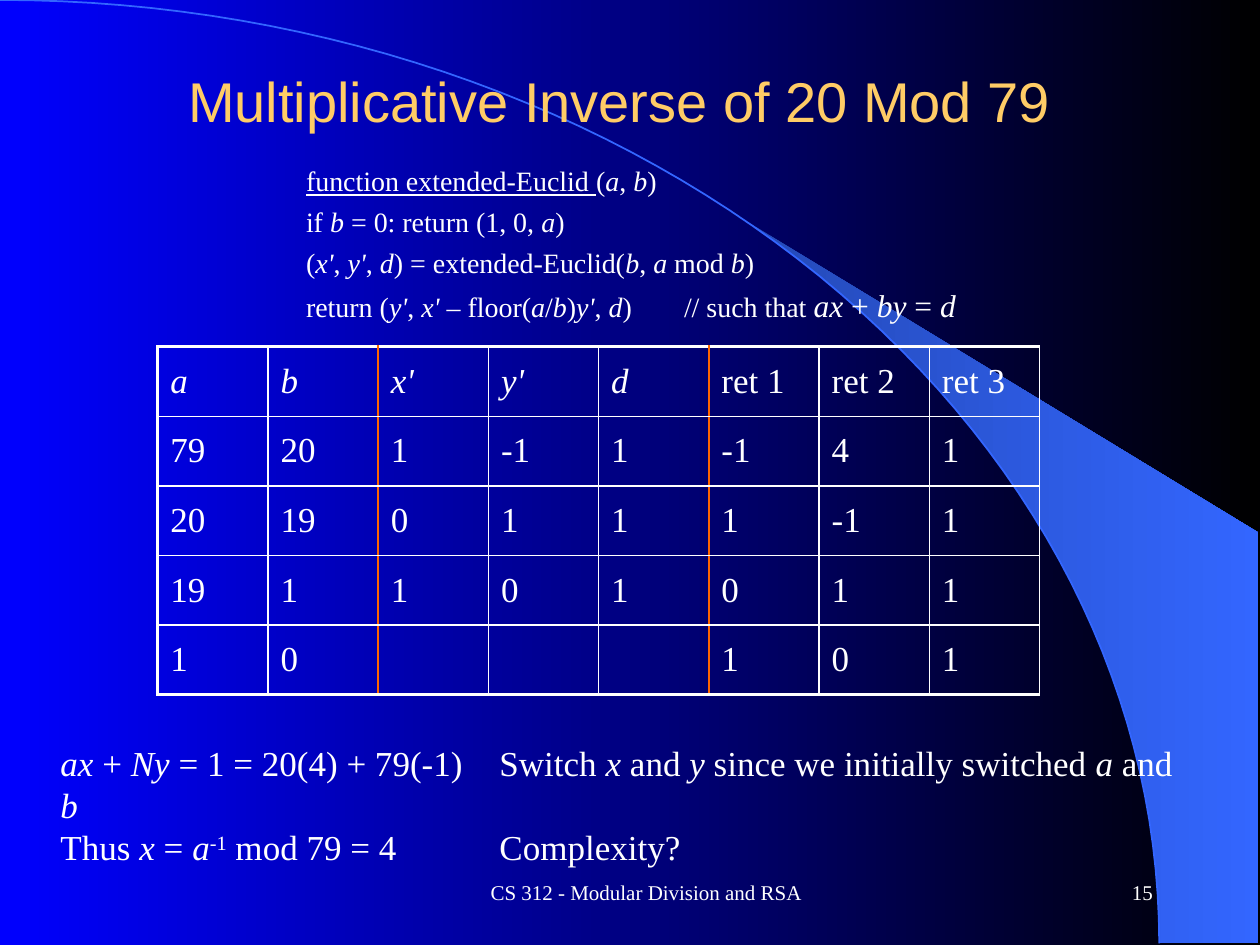
import math

import pptx
import pptx.dml.color
import pptx.enum.text
import pptx.oxml
import pptx.oxml.ns
import pptx.util
from pptx.util import Cm, Pt

WHITE, GOLD, ORANGE, SKY = "FFFFFF", "FFCC66", "FF6600", "3366FF"
CENTER = pptx.enum.text.PP_ALIGN.CENTER
RIGHT = pptx.enum.text.PP_ALIGN.RIGHT
MIDDLE = pptx.enum.text.MSO_ANCHOR.MIDDLE

TITLE = "Multiplicative Inverse of 20 Mod 79"
FOOTER = "CS 312 - Modular Division and RSA"
PAGE = "15"

# Asterisks enclose italics
ALGORITHM = [
    [("function extended-Euclid ", {"underline": True}), ("(*a*, *b*)", {})],
    "if *b* = 0: return (1, 0, *a*)",
    "(*x'*, *y'*, *d*) = extended-Euclid(*b*, *a *mod *b*)",
    [("return (*y'*, *x' *– floor(*a*/*b*)*y'*, *d*) \t// such that ", {}),
     ("*ax *+ *by *= *d*", {"size": 18})],
]
CONCLUSION = [
    "*ax *+ *Ny *= 1 = 20(4) + 79(-1)\tSwitch *x* and *y* since we initially switched *a* and *b*",
    [("Thus *x* = *a*", {}), ("-1", {"raised": True}), (" mod 79 = 4\tComplexity?", {})],
]
STEPS = [
    ["*a*", "*b*", "*x'*", "*y'*", "*d*", "ret 1", "ret 2", "ret 3"],
    ["79", "20", "1", "-1", "1", "-1", "4", "1"],
    ["20", "19", "0", "1", "1", "1", "-1", "1"],
    ["19", "1", "1", "0", "1", "0", "1", "1"],
    ["1", "0", "", "", "", "1", "0", "1"],
]
GROUP_STARTS = (2, 5)

ARC_WIDTH, ARC_HEIGHT = 23.37, 19.02
BEAM_RIGHT, BEAM_TOP = 25.37, 10.74
BEAM_START = math.asin(0.64)


def rgb(color):
    return pptx.dml.color.RGBColor.from_string(color)


def drawing_xml(content):
    return pptx.oxml.parse_xml(content.replace(" ", f" {pptx.oxml.ns.nsdecls('a')} ", 1))


def gradient(fill, colors):
    fill.gradient()
    fill.gradient_angle = 0
    for stop, color, position in zip(fill.gradient_stops, colors, (0, 1)):
        stop.color.rgb = rgb(color)
        stop.position = position


def write(frame, paragraphs, size=20, font="Times New Roman", color=WHITE,
          align=None, after=0, indent=0, tab=None):
    for number, pieces in enumerate(paragraphs):
        paragraph = frame.add_paragraph() if number else frame.paragraphs[0]
        paragraph.alignment = align
        paragraph.space_after = Pt(after)
        properties = paragraph._p.get_or_add_pPr()
        properties.set("marL", str(Cm(indent)))
        if tab:
            properties.append(drawing_xml(
                f'<a:tabLst ><a:tab pos="{Cm(tab)}" algn="l"/></a:tabLst>'))
        if isinstance(pieces, str):
            pieces = [(pieces, {})]
        for words, look in pieces:
            for part, text in enumerate(words.split("*")):
                if not text:
                    continue
                run = paragraph.add_run()
                run.text = text
                run.font.name = font
                run.font.size = Pt(look.get("size", size))
                run.font.color.rgb = rgb(color)
                run.font.italic = part % 2 == 1
                run.font.underline = look.get("underline", False)
                if look.get("raised"):
                    run.font._element.set("baseline", "30000")


def text_area(slide, place, paragraphs, anchor=None, **look):
    frame = slide.shapes.add_textbox(*map(Cm, place)).text_frame
    frame.word_wrap = True
    frame.vertical_anchor = anchor
    write(frame, paragraphs, **look)


def arc(start, segments=60):
    angles = [start + (math.pi / 2 - start) * i / segments for i in range(segments + 1)]
    return [(Cm(ARC_WIDTH * math.sin(t)), Cm(ARC_HEIGHT * (1 - math.cos(t)))) for t in angles]


def outline(slide, points, close):
    builder = slide.shapes.build_freeform(*points[0])
    builder.add_line_segments(points[1:], close=close)
    shape = builder.convert_to_shape()
    shape.shadow.inherit = False
    return shape


def draw_backdrop(slide):
    gradient(slide.background.fill, ("0000FF", "000000"))
    corners = [(Cm(BEAM_RIGHT), Cm(ARC_HEIGHT)), (Cm(BEAM_RIGHT), Cm(BEAM_TOP))]
    beam = outline(slide, arc(BEAM_START) + corners, True)
    gradient(beam.fill, ("2449B6", SKY))
    beam.line.fill.background()
    curve = outline(slide, arc(0), False)
    curve.fill.background()
    curve.line.color.rgb = rgb(SKY)
    curve.line.width = Pt(1)


def set_borders(cell, row, column):
    def vertical(edge):
        return (ORANGE if edge in GROUP_STARTS else WHITE, 1 if edge else 2.25)

    def horizontal(edge):
        return (WHITE, 2.25 if edge in (0, len(STEPS)) else 1)

    sides = {"lnL": vertical(column), "lnR": vertical(column + 1),
             "lnT": horizontal(row), "lnB": horizontal(row + 1)}
    properties = cell._tc.get_or_add_tcPr()
    for index, (side, (color, width)) in enumerate(sides.items()):
        properties.insert(index, drawing_xml(
            f'<a:{side} w="{Pt(width)}"><a:solidFill><a:srgbClr val="{color}"/>'
            f'</a:solidFill></a:{side}>'))


def draw_steps(slide):
    place = map(Cm, (3.18, 6.99, 17.78, 7.01))
    table = slide.shapes.add_table(len(STEPS), len(STEPS[0]), *place).table
    table.first_row = table.horz_banding = False
    for row, values in enumerate(STEPS):
        for column, value in enumerate(values):
            cell = table.cell(row, column)
            cell.vertical_anchor = MIDDLE
            cell.fill.background()
            set_borders(cell, row, column)
            write(cell.text_frame, [value])


def main():
    deck = pptx.Presentation()
    deck.slide_width, deck.slide_height = Cm(25.4), Cm(19.05)
    slide = deck.slides.add_slide(deck.slide_layouts[6])
    draw_backdrop(slide)
    text_area(slide, (8.05, 17.35, 9.96, 1.27), [FOOTER], MIDDLE, size=12, align=CENTER)
    text_area(slide, (18.21, 17.35, 5.28, 1.27), [PAGE], MIDDLE, size=12, align=RIGHT)
    text_area(slide, (1.7, 0.84, 21.59, 2.34), [TITLE], MIDDLE,
              size=32, font="Arial", color=GOLD, align=CENTER)
    draw_steps(slide)
    text_area(slide, (4.65, 3.18, 17.58, 3.51), ALGORITHM, size=16, after=4, indent=1.27)
    text_area(slide, (0.97, 14.83, 23.39, 1.96), CONCLUSION, tab=8.85)
    deck.save("out.pptx")


if __name__ == "__main__":
    main()
